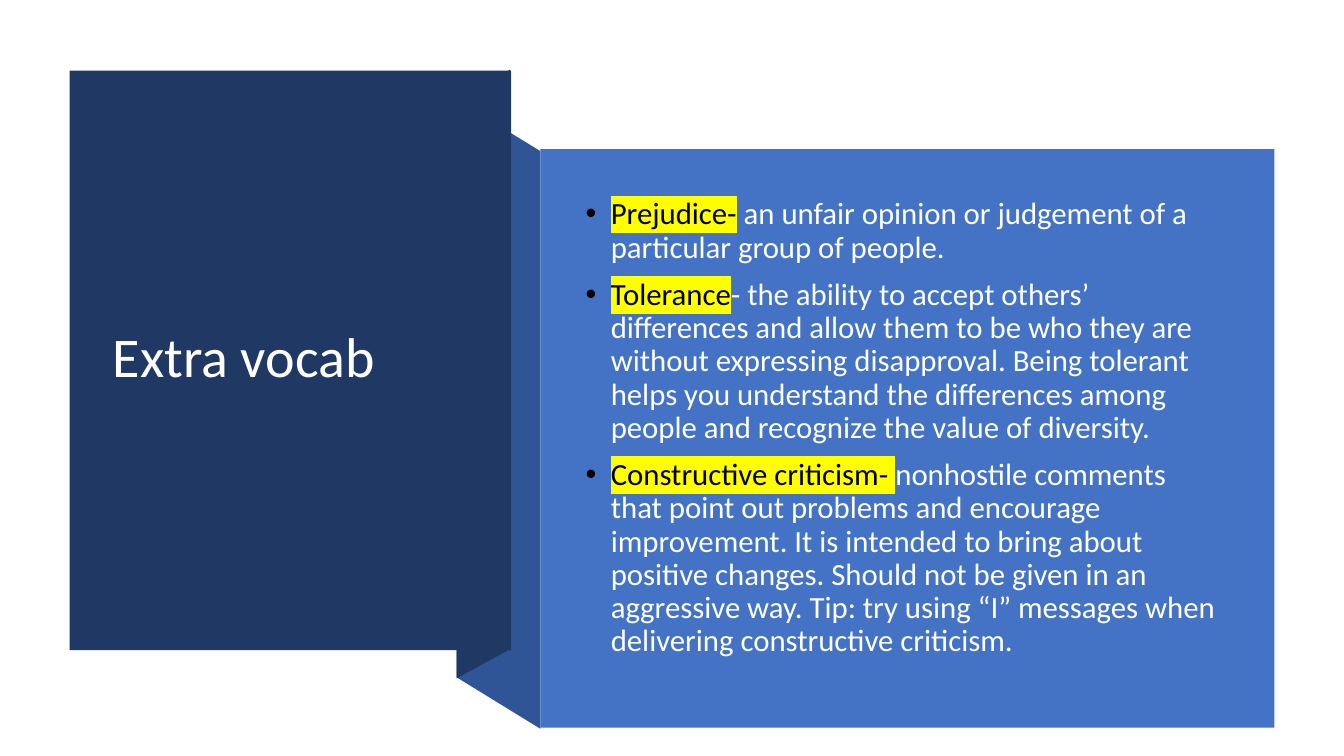
from dataclasses import dataclass

from lxml import etree
from pptx import Presentation
from pptx.dml.color import RGBColor
from pptx.enum.shapes import MSO_SHAPE
from pptx.enum.text import MSO_ANCHOR
from pptx.oxml.ns import qn
from pptx.util import Emu, Pt

RECTANGLE = MSO_SHAPE.RECTANGLE
MIDDLE = MSO_ANCHOR.MIDDLE
EMU_PER_PX = 9144


@dataclass(frozen=True)
class Theme:
    font: str = "Calibri"
    title_size: int = 40
    body_size: int = 22
    navy: str = "203864"
    fold: str = "2F5597"
    blue: str = "4472C4"
    title: str = "FFFFFF"
    body: str = "FEFFFF"
    term: str = "000000"
    highlight: str = "FFFF00"


VOCABULARY = [
    ("Prejudice-", " an unfair opinion or judgement of a particular group of people."),
    ("Tolerance", "- the ability to accept others’ differences and allow them to be "
                  "who they are without expressing disapproval. Being tolerant helps you "
                  "understand the differences among people and recognize the value of "
                  "diversity."),
    ("Constructive criticism- ", "nonhostile comments that point out problems and "
                                 "encourage improvement. It is intended to bring about "
                                 "positive changes. Should not be given in an aggressive "
                                 "way. Tip: try using “I” messages when delivering "
                                 "constructive criticism."),
]


def px(length):
    return Emu(length * EMU_PER_PX)


class SlideBuilder:
    def __init__(self, slide, theme):
        self.slide = slide
        self.theme = theme

    def paint(self, shape, color):
        shape.shadow.inherit = False
        shape.fill.solid()
        shape.fill.fore_color.rgb = RGBColor.from_string(color)
        shape.line.fill.background()

    def panel(self, left, top, width, height, color):
        panel = self.slide.shapes.add_shape(
            RECTANGLE, px(left), px(top), px(width), px(height))
        self.paint(panel, color)

    def ribbon(self, points, color):
        outline = self.slide.shapes.build_freeform(*points[0], scale=EMU_PER_PX)
        outline.add_line_segments(points[1:], close=True)
        self.paint(outline.convert_to_shape(), color)

    def text_frame(self, left, top, width, height):
        frame = self.slide.shapes.add_textbox(
            px(left), px(top), px(width), px(height)).text_frame
        frame.word_wrap = True
        frame.vertical_anchor = MIDDLE
        return frame

    def run(self, paragraph, text, size, color, highlight=None):
        run = paragraph.add_run()
        run.text = text
        run.font.size = Pt(size)
        run.font.color.rgb = RGBColor.from_string(color)
        if highlight:
            marker = etree.Element(qn("a:highlight"))
            etree.SubElement(marker, qn("a:srgbClr"), val=highlight)
            run.font._element.find(qn("a:solidFill")).addnext(marker)
        run.font.name = self.theme.font

    def title(self, left, top, width, height, text):
        paragraph = self.text_frame(left, top, width, height).paragraphs[0]
        paragraph.line_spacing = 0.9
        self.run(paragraph, text, self.theme.title_size, self.theme.title)

    def bullet(self, paragraph):
        indent = px(25)
        properties = paragraph._p.get_or_add_pPr()
        properties.set("marL", str(indent))
        properties.set("indent", str(-indent))
        color = etree.SubElement(properties, qn("a:buClr"))
        etree.SubElement(color, qn("a:srgbClr"), val=self.theme.term)
        etree.SubElement(properties, qn("a:buFont"), typeface="Arial")
        etree.SubElement(properties, qn("a:buChar"), char="•")

    def definitions(self, left, top, width, height, entries):
        theme = self.theme
        frame = self.text_frame(left, top, width, height)
        for index, (term, meaning) in enumerate(entries):
            paragraph = frame.add_paragraph() if index else frame.paragraphs[0]
            paragraph.line_spacing = 0.9
            paragraph.space_before = Pt(10)
            self.bullet(paragraph)
            self.run(paragraph, term, theme.body_size, theme.term, theme.highlight)
            self.run(paragraph, meaning, theme.body_size, theme.body)


def main():
    deck = Presentation()
    deck.slide_width, deck.slide_height = px(1333), px(750)
    theme = Theme()
    page = SlideBuilder(deck.slides.add_slide(deck.slide_layouts[6]), theme)

    page.ribbon([(536, 723), (453, 672), (453, 99), (536, 150)], theme.fold)
    page.ribbon([(506, 644), (453, 673), (453, 98), (506, 69)], theme.navy)
    page.panel(69, 70, 438, 575, theme.navy)
    page.title(102, 107, 371, 499, "Extra vocab")
    page.panel(536, 148, 728, 574, theme.blue)
    page.definitions(571, 188, 651, 474, VOCABULARY)

    deck.save("out.pptx")


if __name__ == "__main__":
    main()
